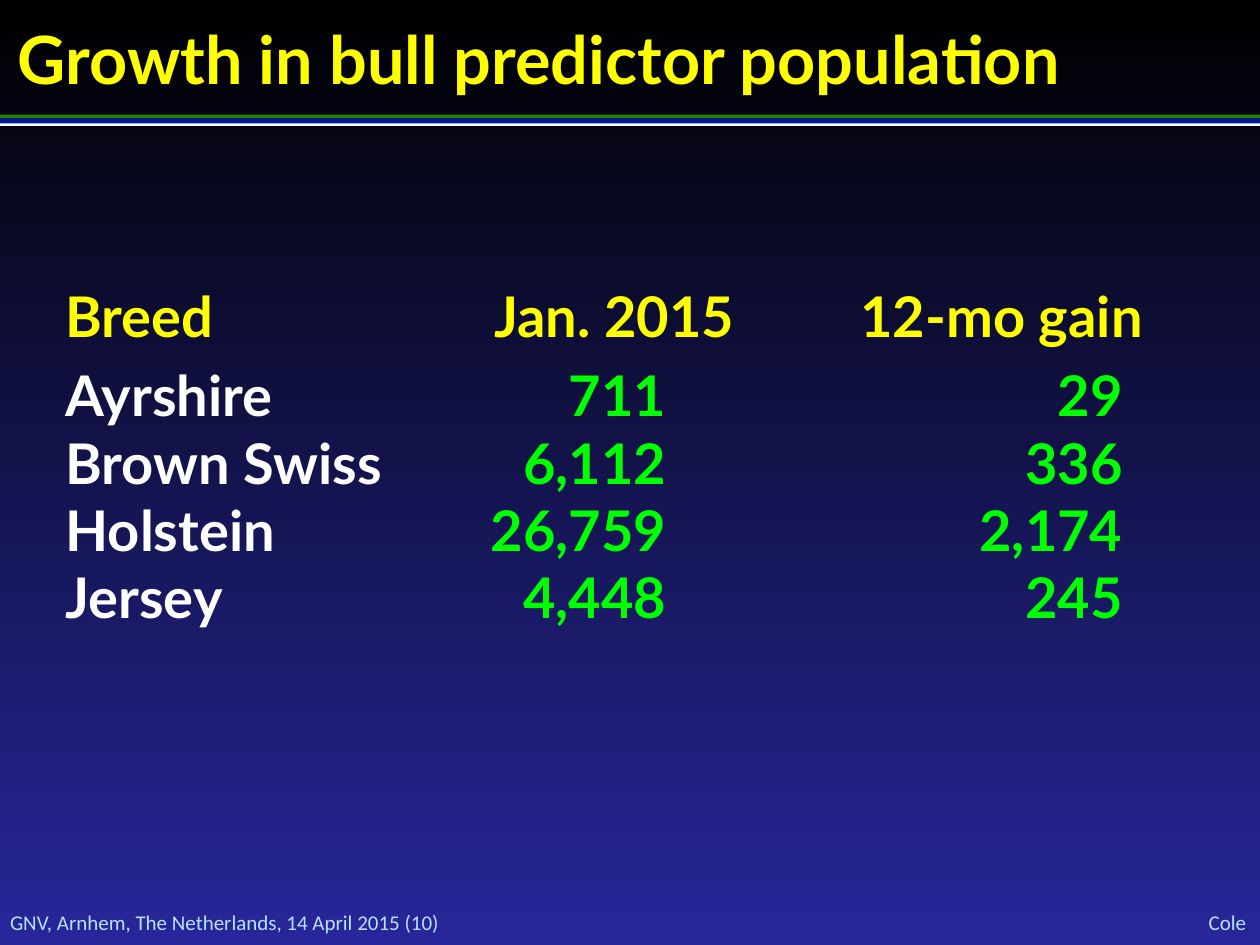
from pptx import Presentation, util as u
from pptx.dml.color import RGBColor
from pptx.enum import shapes, text

WIDTH, HEIGHT = 10, 7.5
YELLOW, WHITE, GREEN, PALE_BLUE = "FFFF00", "FFFFFF", "00FF00", "B8E2FF"
NO_STYLE_NO_GRID = "{2D5ABB26-0587-4C30-8999-92F81FD0307C}"

HEADINGS = ["Breed", "Jan. 2015", "12-mo gain"]
BREEDS = [
    ["Ayrshire", "711", "29"],
    ["Brown Swiss", "6,112", "336"],
    ["Holstein", "26,759", "2,174"],
    ["Jersey", "4,448", "245"],
]
COLUMN_WIDTHS = [2.89, 3.08, 2.92]
HEADING_HEIGHT, ROW_HEIGHT, HEADING_GAP = 0.42, 0.53, 0.1
HEADING_INSETS = [0, 0.15, 0]
NUMBER_INSETS = [0, 1.2, 0.5]


def color(hex_string):
    return RGBColor.from_string(hex_string)


def set_margins(target, top=0, right=0):
    """Set the insets of a text frame or a table cell."""
    target.margin_left = target.margin_bottom = 0
    target.margin_top, target.margin_right = u.Inches(top), u.Inches(right)


def format_paragraph(paragraph, words, font_name, size, hex_string, bold, align):
    paragraph.text = words
    paragraph.alignment = align
    font = paragraph.font
    font.name, font.size, font.bold = font_name, u.Pt(size), bold
    font.color.rgb = color(hex_string)


def paint_background(slide):
    fill = slide.background.fill
    fill.gradient()
    fill.gradient_angle = 270
    for stop, position, hex_string in zip(fill.gradient_stops, (0, 1), ("000000", "27279B")):
        stop.position = position
        stop.color.rgb = color(hex_string)


def add_stripe(slide, top, height, hex_string):
    stripe = slide.shapes.add_shape(
        shapes.MSO_SHAPE.RECTANGLE, 0, u.Inches(top), u.Inches(WIDTH), u.Inches(height))
    stripe.shadow.inherit = False
    stripe.fill.solid()
    stripe.fill.fore_color.rgb = color(hex_string)
    stripe.line.fill.background()


def add_footer(slide, words, left, width, align):
    box = slide.shapes.add_textbox(
        u.Inches(left), u.Inches(HEIGHT - 0.28), u.Inches(width), u.Inches(0.2))
    frame = box.text_frame
    frame.word_wrap = True
    frame.vertical_anchor = text.MSO_ANCHOR.MIDDLE
    set_margins(frame)
    format_paragraph(frame.paragraphs[0], words, "Calibri", 12, PALE_BLUE, False, align)


def set_title(slide, words):
    title = slide.shapes.title
    title.left = title.top = u.Inches(0.14)
    title.width, title.height = u.Inches(9), u.Inches(0.64)
    frame = title.text_frame
    frame.vertical_anchor = text.MSO_ANCHOR.TOP
    frame.auto_size = text.MSO_AUTO_SIZE.SHAPE_TO_FIT_TEXT
    set_margins(frame)
    format_paragraph(frame.paragraphs[0], words, "Lato", 38, YELLOW, True, text.PP_ALIGN.LEFT)


def fill_cell(cell, words, hex_string, align, top=0, right=0):
    cell.fill.background()
    cell.vertical_anchor = text.MSO_ANCHOR.BOTTOM
    set_margins(cell, top, right)
    paragraph = cell.text_frame.paragraphs[0]
    format_paragraph(paragraph, words, "Lato", 32, hex_string, True, align)
    return paragraph


def add_breed_table(slide):
    heights = [HEADING_HEIGHT, ROW_HEIGHT + HEADING_GAP] + [ROW_HEIGHT] * (len(BREEDS) - 1)
    frame = slide.shapes.add_table(
        len(heights), len(COLUMN_WIDTHS), u.Inches(0.52), u.Inches(2.35),
        u.Inches(sum(COLUMN_WIDTHS)), u.Inches(sum(heights)))
    table = frame.table
    table.first_row = table.horz_banding = False
    table._tbl.tblPr.find("{*}tableStyleId").text = NO_STYLE_NO_GRID
    for row, height in zip(table.rows, heights):
        row.height = u.Inches(height)
    for column, width in zip(table.columns, COLUMN_WIDTHS):
        column.width = u.Inches(width)

    align = text.PP_ALIGN
    for index, heading in enumerate(HEADINGS):
        paragraph = fill_cell(table.cell(0, index), heading, YELLOW,
                              align.CENTER if index else align.LEFT,
                              right=HEADING_INSETS[index])
        paragraph.line_spacing = u.Pt(30)
    for row, values in enumerate(BREEDS, start=1):
        for index, value in enumerate(values):
            fill_cell(table.cell(row, index), value,
                      GREEN if index else WHITE,
                      align.RIGHT if index else align.LEFT,
                      top=HEADING_GAP if (row, index) == (1, 0) else 0,
                      right=NUMBER_INSETS[index])


def main():
    presentation = Presentation()
    presentation.slide_width, presentation.slide_height = u.Inches(WIDTH), u.Inches(HEIGHT)
    slide = presentation.slides.add_slide(presentation.slide_layouts.get_by_name("Title Only"))
    paint_background(slide)
    add_footer(slide, "GNV, Arnhem, The Netherlands, 14 April 2015 (10)",
               0.08, 8.5, text.PP_ALIGN.LEFT)
    add_footer(slide, "Cole", 8.77, 1.12, text.PP_ALIGN.RIGHT)
    add_stripe(slide, 0.91, 0.03, "2A7E00")
    add_stripe(slide, 0.97, 0.03, WHITE)
    add_stripe(slide, 0.94, 0.04, "001799")
    set_title(slide, "Growth in bull predictor population")
    add_breed_table(slide)
    presentation.save("out.pptx")


if __name__ == "__main__":
    main()
